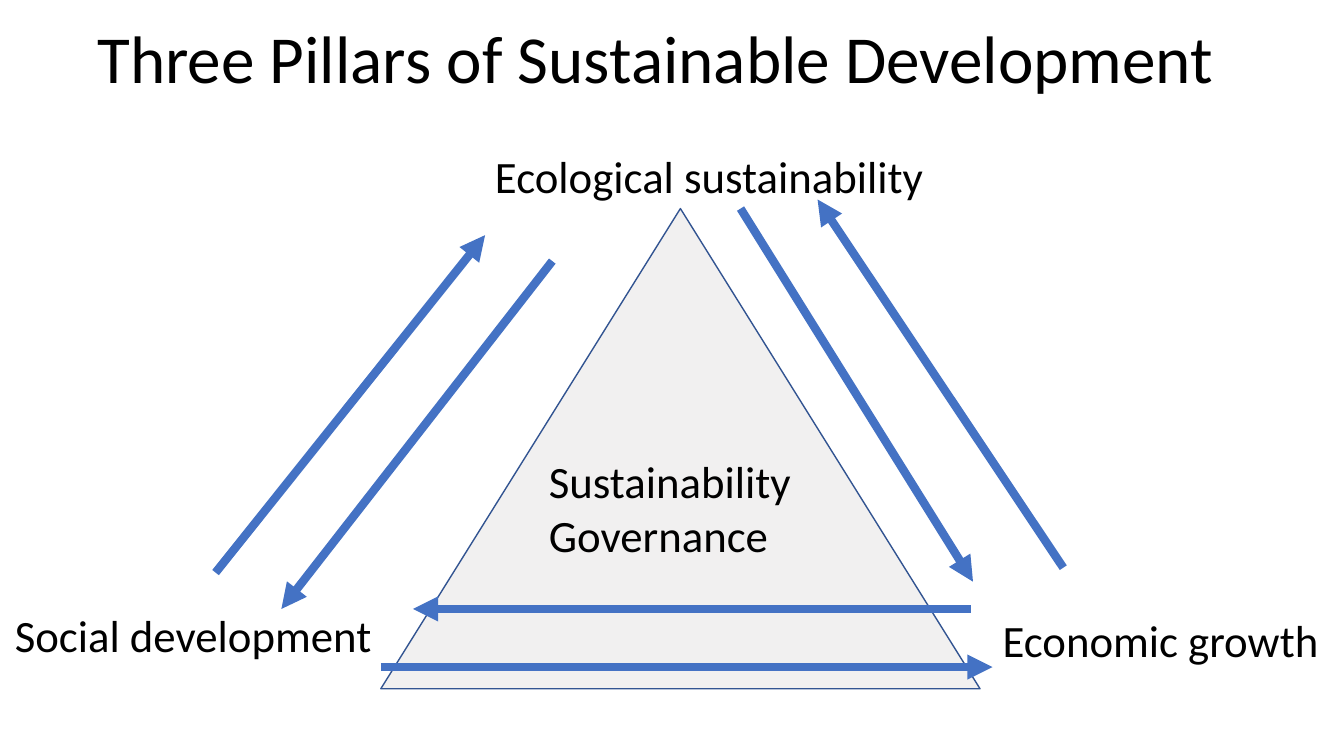
from lxml import etree
from pptx import Presentation
from pptx import util as u
from pptx.dml.color import RGBColor
from pptx.enum import shapes, text
from pptx.oxml import ns

BLACK = RGBColor(0x00, 0x00, 0x00)
BLUE = RGBColor(0x44, 0x72, 0xC4)
NAVY = RGBColor(0x32, 0x54, 0x91)
GREY = RGBColor(0xF1, 0xF0, 0xF0)


class Board:
    font = "Calibri"
    size = 32
    width = 6

    def __init__(self, slide):
        self.items = slide.shapes

    def pillar(self, *box):
        shape = self.items.add_shape(
            shapes.MSO_SHAPE.ISOSCELES_TRIANGLE, *map(u.Pt, box))
        shape.shadow.inherit = False
        shape.fill.solid()
        shape.fill.fore_color.rgb = GREY
        shape.line.color.rgb = NAVY
        shape.line.width = u.Pt(1)

    def words(self, copy, box, size):
        frame = self.items.add_textbox(*map(u.Pt, box)).text_frame
        frame.text = copy
        for para in frame.paragraphs:
            for run in para.runs:
                run.font.name = self.font
                run.font.size = u.Pt(size)
                run.font.color.rgb = BLACK
        return frame

    def label(self, copy, *box):
        frame = self.words(copy, box, self.size)
        frame.word_wrap = False
        frame.auto_size = text.MSO_AUTO_SIZE.SHAPE_TO_FIT_TEXT

    def title(self, copy, *box):
        frame = self.words(copy, box, 48)
        frame.word_wrap = True
        frame.vertical_anchor = text.MSO_ANCHOR.BOTTOM
        frame.paragraphs[0].line_spacing = 0.9

    def arrow(self, *ends):
        link = self.items.add_connector(
            shapes.MSO_CONNECTOR.STRAIGHT, *map(u.Pt, ends))
        link.line.color.rgb = BLUE
        link.line.width = u.Pt(self.width)
        props = link._element.spPr
        etree.SubElement(props.find(ns.qn("a:ln")),
                         ns.qn("a:tailEnd"), type="triangle")
        etree.SubElement(props, ns.qn("a:effectLst"))


def main():
    deck = Presentation()
    deck.slide_width = u.Pt(960)
    deck.slide_height = u.Pt(540)
    board = Board(deck.slides.add_slide(deck.slide_layouts[6]))

    board.pillar(272, 149, 428, 343)
    board.label("Ecological sustainability", 346.5, 103, 324, 46)
    board.label("Economic growth", 709, 434, 250, 46)
    board.label("Social development", 3.5, 430.5, 272, 46)
    board.label("Sustainability\nGovernance", 385, 320.5, 197, 85)

    for ends in (
        (154, 409, 346.5, 168),
        (394.5, 186.5, 201, 435),
        (529, 149, 695, 415.5),
        (759.5, 405.5, 584, 142.5),
        (693.5, 435, 295, 435),
        (272, 476.5, 709, 476.5),
    ):
        board.arrow(*ends)

    board.title("Three Pillars of Sustainable Development",
                62.5, -31, 896.5, 104.5)
    deck.save("out.pptx")


if __name__ == "__main__":
    main()
